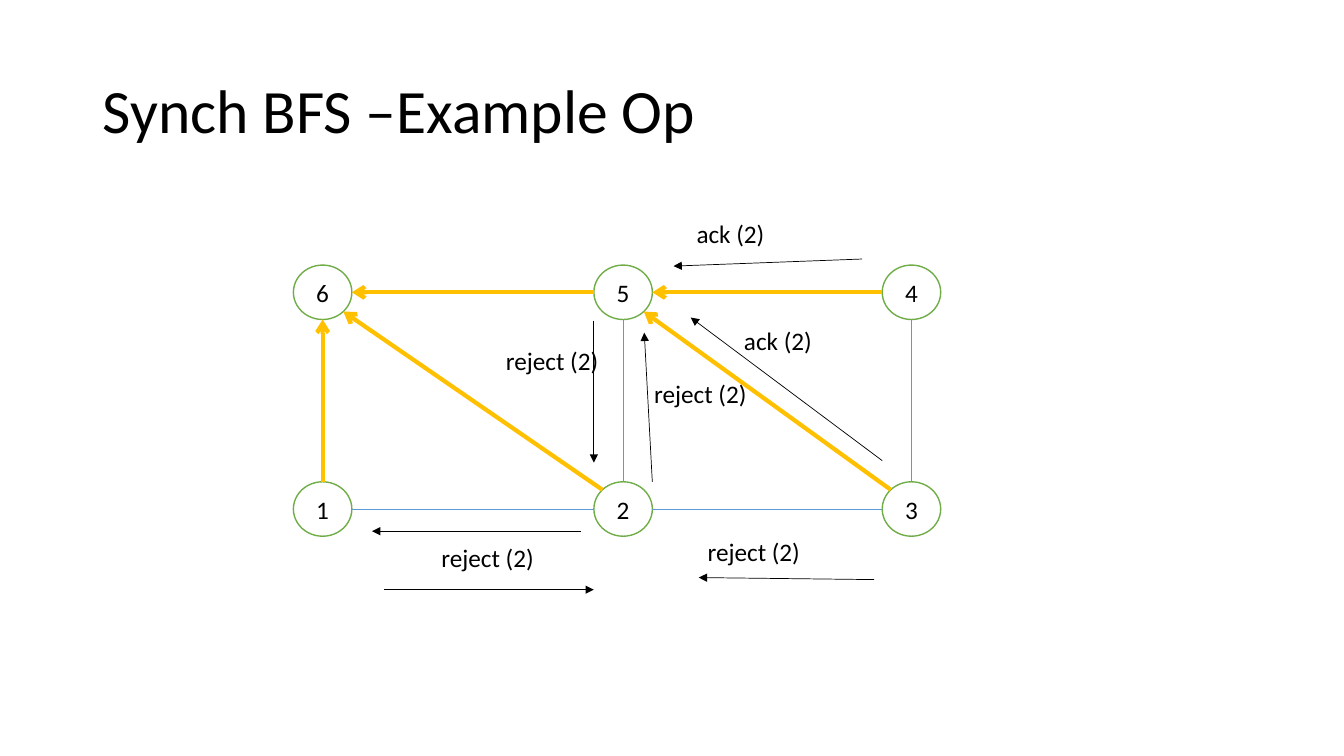
from math import hypot

from pptx import Presentation
from pptx.dml.color import RGBColor
from pptx.enum.shapes import MSO_CONNECTOR as Connector, MSO_SHAPE as Shape
from pptx.enum.text import MSO_ANCHOR as Anchor, PP_ALIGN as Align
from pptx.oxml.ns import qn
from pptx.util import Inches, Pt
from lxml.etree import SubElement

COLORS = {name: RGBColor.from_string(value) for name, value in {
    "text": "000000", "node": "FFFFFF", "outline": "70AD47",
    "tree": "FFC000", "edge": "5B9BD5", "message": "000000",
}.items()}

COLUMNS = (3.2, 6.18, 9.04)
ROWS = (2.9, 5.05)
NODE_W, NODE_H = 0.58, 0.54

# Node number: (column, row)
NODES = {1: (0, 1), 5: (1, 0), 2: (1, 1), 4: (2, 0), 3: (2, 1), 6: (0, 0)}
# Child, parent
TREE_EDGES = [(5, 6), (1, 6), (4, 5), (2, 6), (3, 5)]
PLAIN_EDGES = [(1, 2), (5, 2), (4, 3), (2, 3)]

# Sender end, receiver end
MESSAGES = [
    ((5.76, 5.27), (3.69, 5.27)),
    ((5.89, 3.18), (5.89, 4.59)),
    ((6.47, 4.78), (6.39, 3.3)),
    ((8.75, 4.57), (6.85, 3.15)),
    ((8.55, 2.57), (6.68, 2.64)),
    ((8.67, 5.75), (6.93, 5.73)),
    ((3.81, 5.85), (5.89, 5.85)),
]
# Wording, left, top, width
LABELS = [
    ("reject (2)", 4.28, 5.33, 1.29),
    ("ack (2)", 6.81, 2.12, 1.79),
    ("ack (2)", 7.28, 3.18, 1.68),
    ("reject (2)", 4.92, 3.38, 1.72),
    ("reject (2)", 6.92, 5.27, 1.13),
    ("reject (2)", 6.39, 3.7, 1.13),
]

prs = Presentation()
prs.slide_width, prs.slide_height = Inches(13.33), Inches(7.5)
slide = prs.slides.add_slide(prs.slide_layouts[6])


def write(shape, wording, size=18):
    paragraph = shape.text_frame.paragraphs[0]
    run = paragraph.add_run()
    run.text = wording
    run.font.name = "Calibri"
    run.font.size = Pt(size)
    run.font.color.rgb = COLORS["text"]
    return paragraph


def draw_line(start, end, color, width, arrowhead=None):
    """Draw a straight line, with an optional arrowhead at its end."""
    line = slide.shapes.add_connector(
        Connector.STRAIGHT, *(Inches(length) for length in (*start, *end)))
    line.line.color.rgb = COLORS[color]
    line.line.width = Pt(width)
    if arrowhead:
        SubElement(line.line._get_or_add_ln(), qn("a:tailEnd"), type=arrowhead)
    SubElement(line._element.spPr, qn("a:effectLst"))


title = slide.shapes.add_textbox(Inches(0.92), Inches(0.4), Inches(11.5), Inches(1.45))
title.text_frame.word_wrap = True
title.text_frame.vertical_anchor = Anchor.MIDDLE
write(title, "Synch BFS –Example Op", 44).line_spacing = 0.9

for number, (column, row) in NODES.items():
    node = slide.shapes.add_shape(
        Shape.OVAL, Inches(COLUMNS[column] - NODE_W / 2), Inches(ROWS[row] - NODE_H / 2),
        Inches(NODE_W), Inches(NODE_H))
    node.shadow.inherit = False
    node.fill.solid()
    node.fill.fore_color.rgb = COLORS["node"]
    node.line.color.rgb = COLORS["outline"]
    node.line.width = Pt(1)
    node.text_frame.vertical_anchor = Anchor.MIDDLE
    write(node, str(number)).alignment = Align.CENTER

# Each edge runs between the rims, in one of eight directions
for edges, style in ((PLAIN_EDGES, ("edge", 0.5)), (TREE_EDGES, ("tree", 3, "arrow"))):
    for first, second in edges:
        (column_a, row_a), (column_b, row_b) = NODES[first], NODES[second]
        across, down = column_b - column_a, row_b - row_a
        rim_x = NODE_W / 2 * across / hypot(across, down)
        rim_y = NODE_H / 2 * down / hypot(across, down)
        draw_line((COLUMNS[column_a] + rim_x, ROWS[row_a] + rim_y),
                  (COLUMNS[column_b] - rim_x, ROWS[row_b] - rim_y), *style)

for sender, receiver in MESSAGES:
    draw_line(sender, receiver, "message", 0.5, "triangle")

for wording, left, top, width in LABELS:
    label = slide.shapes.add_textbox(Inches(left), Inches(top), Inches(width), Inches(0.4))
    label.text_frame.word_wrap = True
    write(label, wording)

prs.save("out.pptx")
